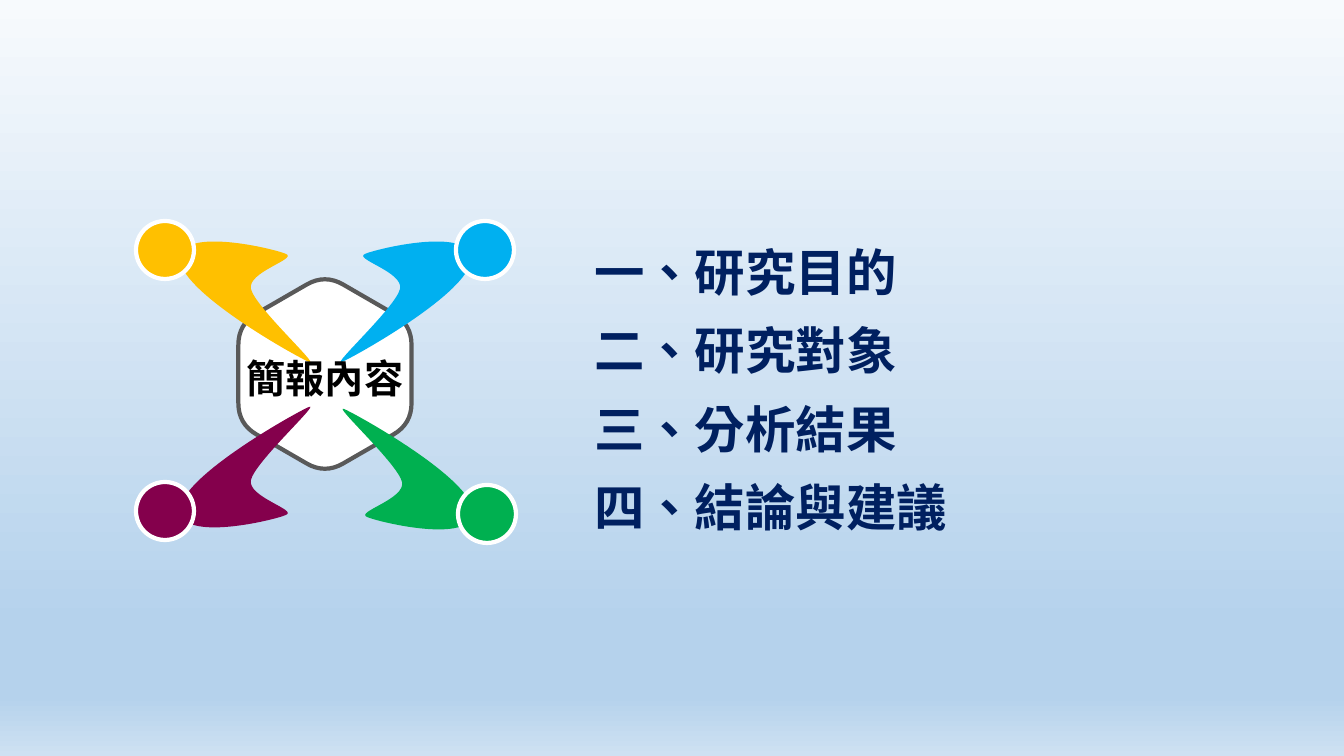
import math
from dataclasses import dataclass

import lxml.etree
import pptx
import pptx.dml.color
import pptx.enum.shapes
import pptx.enum.text
import pptx.oxml.ns
import pptx.util

SLIDE_WIDTH, SLIDE_HEIGHT = 1344, 756
EMU_PER_PX = 12192000 / SLIDE_WIDTH
COLORS = {
    "navy": "002060", "black": "000000", "white": "FFFFFF", "grey": "595959",
    "blue": "00B0F0", "amber": "FFC000", "green": "00B050", "plum": "84004C",
    "sky_top": "F7FAFD", "sky_deep": "B5D2EC", "sky_foot": "CEE1F2",
}
SKY_STOPS = [(0, "sky_top"), (83, "sky_deep"), (92, "sky_deep"), (100, "sky_foot")]
LATIN_FONT, CJK_FONT = "Times New Roman", "Noto Sans CJK SC"
TOPICS = [("一", "研究目的"), ("二", "研究對象"), ("三", "分析結果"), ("四", "結論與建議")]

HEXAGON_CENTER, HEXAGON_RADIUS, CORNER_CUT = (325, 374), 100, 0.21
HEAD_SIZE = 58
CURVE_STEPS = 24
ARM_CURVES = [
    [(400, 289), (404, 272), (353, 259), (365, 254)],
    [(365, 254), (376, 249), (471, 226), (471, 259)],
    [(471, 259), (471, 292), (354, 357), (342, 362)],
    [(342, 362), (330, 367), (396, 307), (400, 289)],
]
Point = tuple[float, float]
Curve = list[Point]


@dataclass(frozen=True)
class Figure:
    """A person: an arm mirrored by sign and shifted by offset, and a round head."""
    color: str
    sign: tuple[int, int]
    offset: tuple[int, int]
    head: tuple[int, int]


FIGURES = [
    Figure("blue", (1, 1), (0, 0), (456, 221)),
    Figure("amber", (-1, 1), (651, 0), (136, 221)),
    Figure("green", (1, -1), (2, 771), (458, 485)),
    Figure("plum", (-1, -1), (651, 769), (136, 482)),
]


def px(length: float) -> pptx.util.Emu:
    return pptx.util.Emu(round(length * EMU_PER_PX))


def rgb(color: str) -> pptx.dml.color.RGBColor:
    return pptx.dml.color.RGBColor.from_string(COLORS[color])


def add_element(parent, tag: str, **attributes: str):
    return lxml.etree.SubElement(parent, pptx.oxml.ns.qn(tag), **attributes)


def between(start: Point, end: Point, share: float) -> Point:
    return (start[0] + (end[0] - start[0]) * share,
            start[1] + (end[1] - start[1]) * share)


def curve_point(controls: Curve, share: float) -> Point:
    """Point on a Bézier curve of any degree."""
    while len(controls) > 1:
        controls = [between(a, b, share) for a, b in zip(controls, controls[1:])]
    return controls[0]


def rounded_hexagon() -> list[Curve]:
    x, y = HEXAGON_CENTER
    corners = [(x + HEXAGON_RADIUS * math.sin(math.radians(60 * i)),
                y - HEXAGON_RADIUS * math.cos(math.radians(60 * i))) for i in range(6)]
    return [[between(corner, corners[i - 1], CORNER_CUT), corner,
             between(corner, corners[(i + 1) % 6], CORNER_CUT)]
            for i, corner in enumerate(corners)]


def paint(shape, fill: str, line: str | None = None) -> None:
    shape.shadow.inherit = False
    shape.fill.solid()
    shape.fill.fore_color.rgb = rgb(fill)
    if line:
        shape.line.color.rgb = rgb(line)
        shape.line.width = pptx.util.Pt(3)
    else:
        shape.line.fill.background()


def add_outline(shapes, curves: list[Curve], fill: str, line: str | None = None) -> None:
    """Size a freeform by points on its curves, then give it the curves themselves."""
    points = [curve_point(curve, i / CURVE_STEPS)
              for curve in curves for i in range(CURVE_STEPS + 1)]
    vertices = [(px(x), px(y)) for x, y in points]
    builder = shapes.build_freeform(*vertices[0], scale=1.0)
    builder.add_line_segments(vertices[1:], close=True)
    outline = builder.convert_to_shape()
    route = outline.element.xpath(".//a:path")[0]
    for segment in list(route):
        route.remove(segment)

    def add_segment(tag: str, stops: Curve) -> None:
        segment = add_element(route, tag)
        for x, y in stops:
            add_element(segment, "a:pt", x=str(px(x) - outline.left), y=str(px(y) - outline.top))

    position = None
    for start, *controls in curves:
        if start != position:
            add_segment("a:lnTo" if position else "a:moveTo", [start])
        add_segment("a:cubicBezTo" if len(controls) == 3 else "a:quadBezTo", controls)
        position = controls[-1]
    add_element(route, "a:close")
    paint(outline, fill, line)


def add_arm(shapes, figure: Figure) -> None:
    (sign_x, sign_y), (shift_x, shift_y) = figure.sign, figure.offset
    curves = [[(sign_x * x + shift_x, sign_y * y + shift_y) for x, y in curve]
              for curve in ARM_CURVES]
    add_outline(shapes, curves, figure.color)


def add_head(shapes, figure: Figure) -> None:
    left, top = figure.head
    head = shapes.add_shape(pptx.enum.shapes.MSO_SHAPE.OVAL,
                            px(left), px(top), px(HEAD_SIZE), px(HEAD_SIZE))
    paint(head, figure.color, "white")


def add_text(paragraph, text: str, *, size: int, color: str, font: str) -> None:
    run = paragraph.add_run()
    run.text = text
    run.font.size = pptx.util.Pt(size)
    run.font.bold = True
    run.font.color.rgb = rgb(color)
    run.font.name = font
    properties = run.font._element
    properties.set("lang", "zh-TW")
    add_element(properties, "a:ea", typeface=CJK_FONT)


def place(placeholder, left: int, top: int, width: int, height: int, *,
          anchor: pptx.enum.text.MSO_ANCHOR, wrap: bool) -> None:
    placeholder.left, placeholder.top = px(left), px(top)
    placeholder.width, placeholder.height = px(width), px(height)
    frame = placeholder.text_frame
    frame.auto_size = pptx.enum.text.MSO_AUTO_SIZE.NONE
    frame.vertical_anchor = anchor
    frame.word_wrap = wrap


def fill_background(slide) -> None:
    sky = slide.background.fill
    sky.gradient()
    sky.gradient_angle = 270
    stops = slide.element.xpath(".//p:bg//a:gsLst")[0]
    for stop in list(stops):
        stops.remove(stop)
    for percent, color in SKY_STOPS:
        stop = add_element(stops, "a:gs", pos=str(percent * 1000))
        add_element(stop, "a:srgbClr", val=COLORS[color])


def fill_agenda(agenda) -> None:
    place(agenda, 584, 221, 760, 321, anchor=pptx.enum.text.MSO_ANCHOR.BOTTOM, wrap=True)
    for i, (number, topic) in enumerate(TOPICS):
        frame = agenda.text_frame
        line = frame.add_paragraph() if i else frame.paragraphs[0]
        line.line_spacing = 1.3
        line.space_before = pptx.util.Pt(0)
        properties = line._p.get_or_add_pPr()
        properties.set("marL", "0")
        properties.set("indent", "0")
        add_element(properties, "a:buNone")
        for text, font in [(number, LATIN_FONT), ("、", CJK_FONT), (topic, LATIN_FONT)]:
            add_text(line, text, size=36, color="navy", font=font)


def fill_heading(heading) -> None:
    place(heading, 236, 349, 178, 57, anchor=pptx.enum.text.MSO_ANCHOR.TOP, wrap=False)
    line = heading.text_frame.paragraphs[0]
    line.alignment = pptx.enum.text.PP_ALIGN.CENTER
    add_text(line, "簡報內容", size=28, color="black", font=CJK_FONT)


def main() -> None:
    presentation = pptx.Presentation()
    presentation.slide_width, presentation.slide_height = px(SLIDE_WIDTH), px(SLIDE_HEIGHT)
    slide = presentation.slides.add_slide(presentation.slide_layouts[1])
    fill_background(slide)
    heading, agenda = slide.shapes.title, slide.placeholders[1]
    fill_agenda(agenda)
    emblem = slide.shapes.add_group_shape().shapes
    add_outline(emblem, rounded_hexagon(), "white", "grey")
    for figure in FIGURES:
        add_arm(emblem, figure)
    for figure in FIGURES:
        add_head(emblem, figure)
    fill_heading(heading)
    slide.shapes.element.append(heading.element)  # The heading lies over the emblem.
    presentation.save("out.pptx")


if __name__ == "__main__":
    main()
